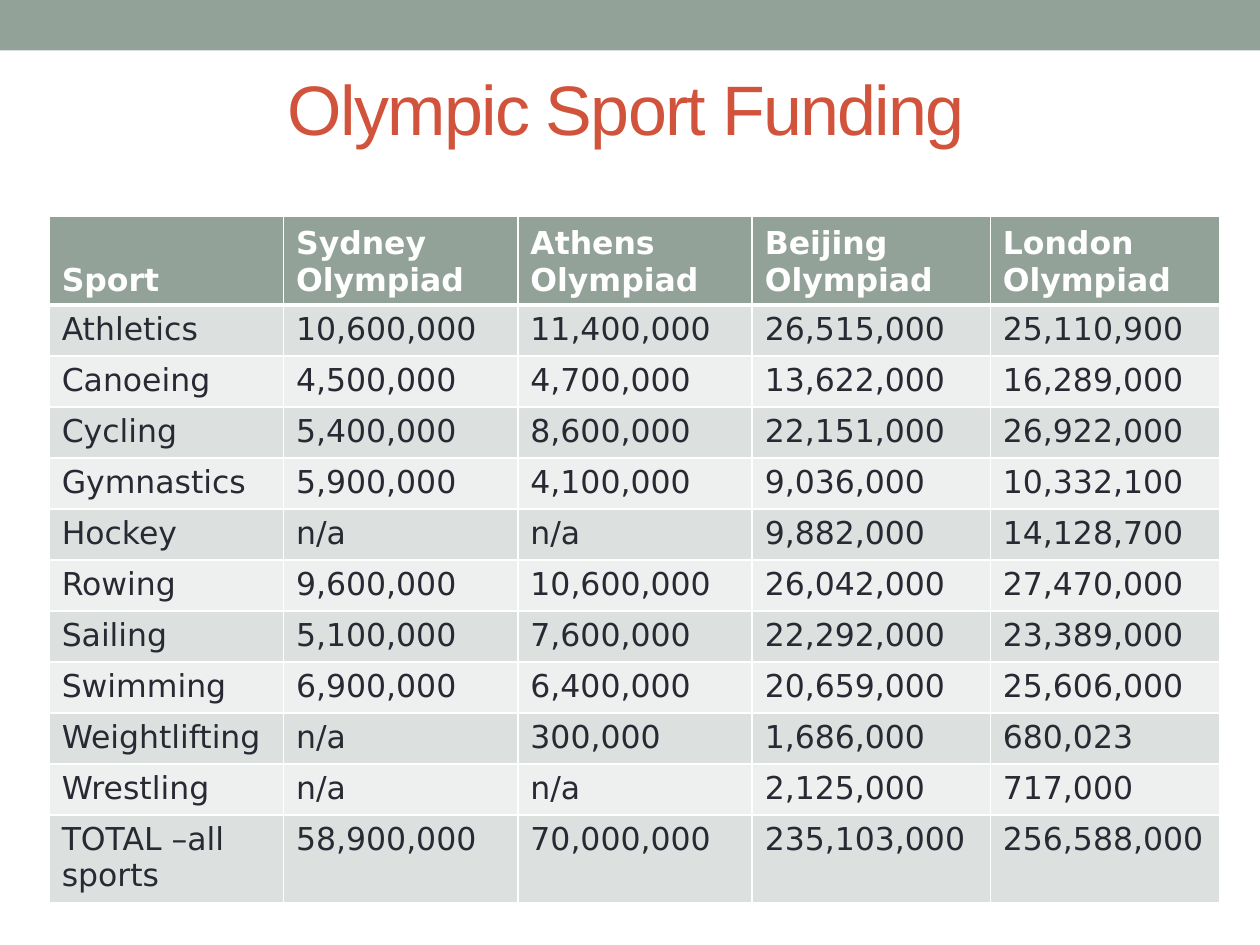
"""Build the Olympic Sport Funding slide."""
from dataclasses import dataclass

import lxml.etree
import pptx
import pptx.dml.color
import pptx.enum.shapes
import pptx.enum.text
import pptx.oxml.ns
import pptx.slide
import pptx.table
import pptx.text.text
import pptx.util

Inches = pptx.util.Inches
RGBColor = pptx.dml.color.RGBColor
Anchor = pptx.enum.text.MSO_ANCHOR

SAGE = RGBColor(0x93, 0xA2, 0x99)
RUST = RGBColor(0xD2, 0x53, 0x3C)
INK = RGBColor(0x29, 0x29, 0x34)
WHITE = RGBColor(0xFF, 0xFF, 0xFF)
DARK_BAND = RGBColor(0xDC, 0xE0, 0xDE)
LIGHT_BAND = RGBColor(0xEE, 0xF0, 0xEF)

COLUMN_WIDTHS = (1.86, 1.86, 1.86, 1.89, 1.82)
TALL_ROW, ROW = 0.7, 0.405
HEADER = ("Sport", "Sydney Olympiad", "Athens\nOlympiad", "Beijing Olympiad", "London Olympiad")


@dataclass(frozen=True)
class Funding:
    sport: str
    sydney: str
    athens: str
    beijing: str
    london: str

    def texts(self) -> tuple[str, ...]:
        return self.sport, self.sydney, self.athens, self.beijing, self.london


@dataclass(frozen=True)
class CellStyle:
    fill: RGBColor
    color: RGBColor = INK
    bold: bool = False
    anchor: Anchor = Anchor.TOP
    top: int = 1
    bottom: int = 1


FUNDING = (
    Funding("Athletics", "10,600,000", "11,400,000", "26,515,000", "25,110,900"),
    Funding("Canoeing", "4,500,000", "4,700,000", "13,622,000", "16,289,000"),
    Funding("Cycling", "5,400,000", "8,600,000", "22,151,000", "26,922,000"),
    Funding("Gymnastics", "5,900,000", "4,100,000", "9,036,000", "10,332,100"),
    Funding("Hockey", "n/a", "n/a", "9,882,000", "14,128,700"),
    Funding("Rowing", "9,600,000", "10,600,000", "26,042,000", "27,470,000"),
    Funding("Sailing", "5,100,000", "7,600,000", "22,292,000", "23,389,000"),
    Funding("Swimming", "6,900,000", "6,400,000", "20,659,000", "25,606,000"),
    Funding("Weightlifting", "n/a", "300,000", "1,686,000", "680,023"),
    Funding("Wrestling", "n/a", "n/a", "2,125,000", "717,000"),
    Funding("TOTAL –all sports", "58,900,000", "70,000,000", "235,103,000", "256,588,000"),
)


def format_text(frame: pptx.text.text.TextFrame, font: str, size: int,
                color: RGBColor, bold: bool = False) -> None:
    for para in frame.paragraphs:
        for span in para.runs:
            span.font.name = font
            span.font.size = pptx.util.Pt(size)
            span.font.color.rgb = color
            span.font.bold = bold


def draw_bar(page: pptx.slide.Slide) -> None:
    bar = page.shapes.add_shape(pptx.enum.shapes.MSO_SHAPE.RECTANGLE, 0, 0, Inches(10), Inches(0.4))
    bar.shadow.inherit = False
    bar.fill.solid()
    bar.fill.fore_color.rgb = SAGE
    bar.line.fill.background()


def draw_title(page: pptx.slide.Slide, text: str) -> None:
    box = page.shapes.add_textbox(Inches(0.47), Inches(0.23), Inches(9), Inches(1.25))
    frame = box.text_frame
    frame.word_wrap = True
    frame.vertical_anchor = Anchor.MIDDLE
    frame.text = text
    para = frame.paragraphs[0]
    para.alignment = pptx.enum.text.PP_ALIGN.CENTER
    format_text(frame, "Arial", 40, RUST)
    para.runs[0].font._element.set("spc", "-100")


def add_borders(cell: pptx.table._Cell, top: int, bottom: int) -> None:
    qn = pptx.oxml.ns.qn
    properties = cell._tc.get_or_add_tcPr()
    widths = {"a:lnL": 1, "a:lnR": 1, "a:lnT": top, "a:lnB": bottom}
    for position, (tag, width) in enumerate(widths.items()):
        line = lxml.etree.Element(qn(tag), w=str(pptx.util.Pt(width)))
        fill = lxml.etree.SubElement(line, qn("a:solidFill"))
        lxml.etree.SubElement(fill, qn("a:srgbClr"), val=str(WHITE))
        properties.insert(position, line)


def fill_cell(cell: pptx.table._Cell, text: str, style: CellStyle) -> None:
    cell.text_frame.text = text
    cell.vertical_anchor = style.anchor
    cell.fill.solid()
    cell.fill.fore_color.rgb = style.fill
    format_text(cell.text_frame, "DejaVu Sans", 18, style.color, style.bold)
    add_borders(cell, style.top, style.bottom)


def row_style(index: int) -> CellStyle:
    if index == 0:
        return CellStyle(SAGE, WHITE, bold=True, anchor=Anchor.BOTTOM, bottom=3)
    return CellStyle(DARK_BAND if index % 2 else LIGHT_BAND, top=3 if index == 1 else 1)


def draw_table(page: pptx.slide.Slide) -> None:
    rows = [HEADER] + [funding.texts() for funding in FUNDING]
    heights = [TALL_ROW] + [ROW] * (len(rows) - 2) + [TALL_ROW]
    table = page.shapes.add_table(
        len(rows), len(HEADER), Inches(0.39), Inches(1.72),
        Inches(sum(COLUMN_WIDTHS)), Inches(sum(heights))).table
    for column, width in zip(table.columns, COLUMN_WIDTHS):
        column.width = Inches(width)
    for index, (texts, height) in enumerate(zip(rows, heights)):
        table.rows[index].height = Inches(height)
        for column, text in enumerate(texts):
            fill_cell(table.cell(index, column), text, row_style(index))


def main() -> None:
    deck = pptx.Presentation()
    deck.slide_width, deck.slide_height = Inches(10), Inches(7.5)
    page = deck.slides.add_slide(deck.slide_layouts[6])
    draw_bar(page)
    draw_title(page, "Olympic Sport Funding")
    draw_table(page)
    deck.save("out.pptx")


if __name__ == "__main__":
    main()
